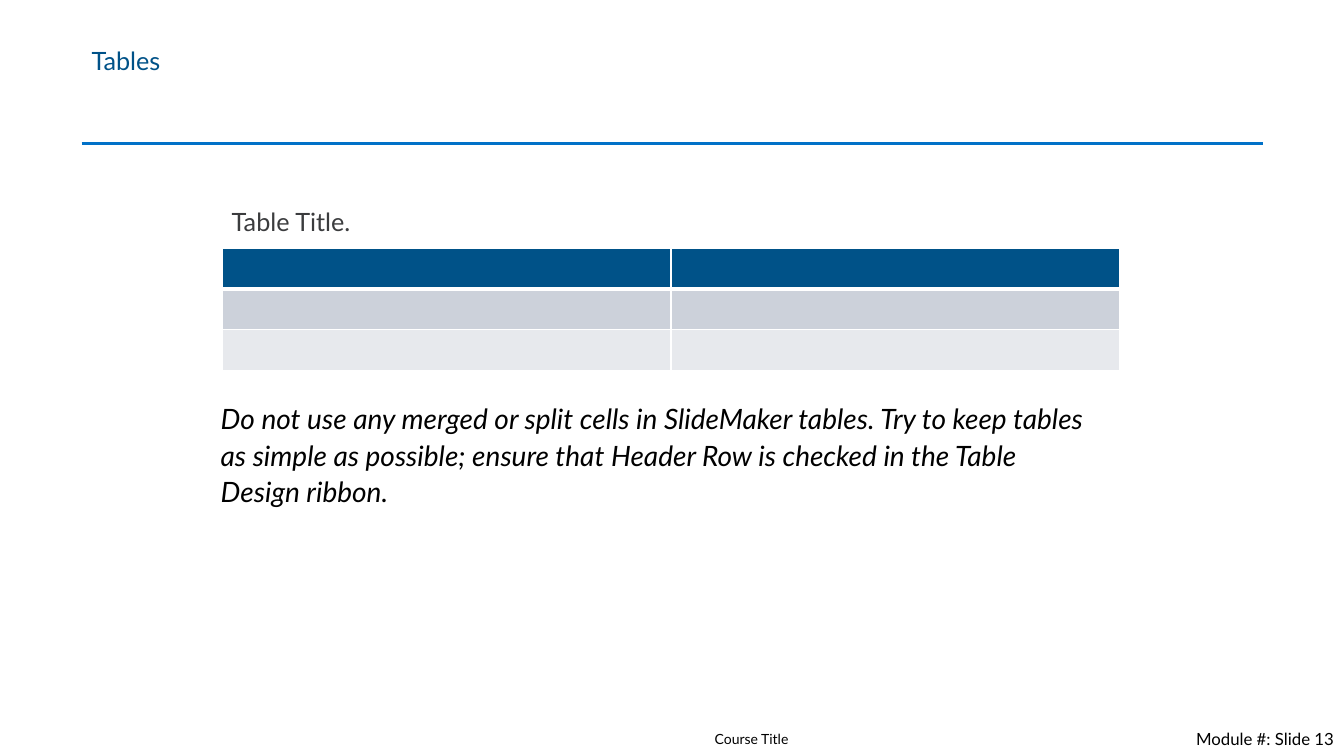
"""Build the "Tables" guidance slide with a ruled title, sample table and footer."""
from dataclasses import dataclass

from lxml import etree
from pptx import Presentation
from pptx import util as u
from pptx.dml.color import RGBColor
from pptx.enum import shapes, text
from pptx.oxml import ns
from pptx.slide import Slide
from pptx.table import _Cell

PX = 9144


@dataclass(frozen=True)
class Theme:
    font: str = "Lato"
    navy: str = "005288"
    rule: str = "0171C8"
    charcoal: str = "3B3C3E"
    black: str = "000000"
    white: str = "FFFFFF"
    bands: tuple[str, ...] = ("005288", "CCD1DA", "E7E9ED")
    footer: int = 10
    page: int = 12
    heading: int = 18
    body: int = 20
    thin: int = 1
    thick: int = 3


THEME = Theme()


@dataclass(frozen=True)
class Box:
    left: int
    top: int
    width: int
    height: int

    def emu(self) -> tuple[int, ...]:
        return tuple(n * PX for n in (self.left, self.top, self.width, self.height))


@dataclass(frozen=True)
class Label:
    wording: str
    box: Box
    size: int
    colour: str = THEME.black
    anchor: text.MSO_ANCHOR = text.MSO_ANCHOR.MIDDLE
    align: text.PP_ALIGN = text.PP_ALIGN.LEFT
    leading: int | None = None
    italic: bool = False


LABELS = (
    Label("Course Title", Box(699, 717, 501, 32), THEME.footer),
    Label("Module #: Slide 13", Box(1029, 717, 304, 32), THEME.page,
          align=text.PP_ALIGN.RIGHT),
    Label("Tables", Box(81, 19, 1145, 81), THEME.heading, THEME.navy),
    Label("Table Title.", Box(220, 199, 891, 58), THEME.heading, THEME.charcoal,
          text.MSO_ANCHOR.TOP, leading=22),
    Label("Do not use any merged or split cells in SlideMaker tables. Try to keep tables "
          "as simple as possible; ensure that Header Row is checked in the Table "
          "Design ribbon.", Box(209, 391, 891, 135), THEME.body,
          anchor=text.MSO_ANCHOR.TOP, leading=26, italic=True),
)


def draw_label(slide: Slide, label: Label) -> None:
    frame = slide.shapes.add_textbox(*label.box.emu()).text_frame
    frame.word_wrap = True
    frame.vertical_anchor = label.anchor
    frame.text = label.wording
    paragraph = frame.paragraphs[0]
    paragraph.alignment = label.align
    if label.leading:
        paragraph.line_spacing = u.Pt(label.leading)
    font = paragraph.runs[0].font
    font.name = THEME.font
    font.size = u.Pt(label.size)
    font.italic = label.italic
    font.color.rgb = RGBColor.from_string(label.colour)


def draw_rule(slide: Slide, left: int, right: int, y: int) -> None:
    rule = slide.shapes.add_connector(
        shapes.MSO_CONNECTOR.STRAIGHT, left * PX, y * PX, right * PX, y * PX)
    rule.line.color.rgb = RGBColor.from_string(THEME.rule)
    rule.line.width = u.Pt(2)
    etree.SubElement(rule._element.spPr, ns.qn("a:effectLst"))


def style_cell(cell: _Cell, fill: str, top: int, bottom: int) -> None:
    cell.fill.solid()
    cell.fill.fore_color.rgb = RGBColor.from_string(fill)
    properties = cell._tc.get_or_add_tcPr()
    widths = {"L": THEME.thin, "R": THEME.thin, "T": top, "B": bottom}
    for index, (side, width) in enumerate(widths.items()):
        border = etree.Element(ns.qn(f"a:ln{side}"), w=str(u.Pt(width)))
        paint = etree.SubElement(border, ns.qn("a:solidFill"))
        etree.SubElement(paint, ns.qn("a:srgbClr"), val=THEME.white)
        properties.insert(index, border)


def draw_table(slide: Slide, box: Box, columns: int) -> None:
    grid = slide.shapes.add_table(len(THEME.bands), columns, *box.emu()).table
    for row, fill in enumerate(THEME.bands):
        top = THEME.thick if row == 1 else THEME.thin
        bottom = THEME.thick if row == 0 else THEME.thin
        for column in range(columns):
            style_cell(grid.cell(row, column), fill, top, bottom)


def main() -> None:
    deck = Presentation()
    deck.slide_width, deck.slide_height = 1333 * PX, 750 * PX
    slide = deck.slides.add_slide(deck.slide_layouts[6])
    draw_rule(slide, 81, 1253, 142)
    for label in LABELS:
        draw_label(slide, label)
    draw_table(slide, Box(221, 246, 889, 122), columns=2)
    deck.save("out.pptx")


if __name__ == "__main__":
    main()
